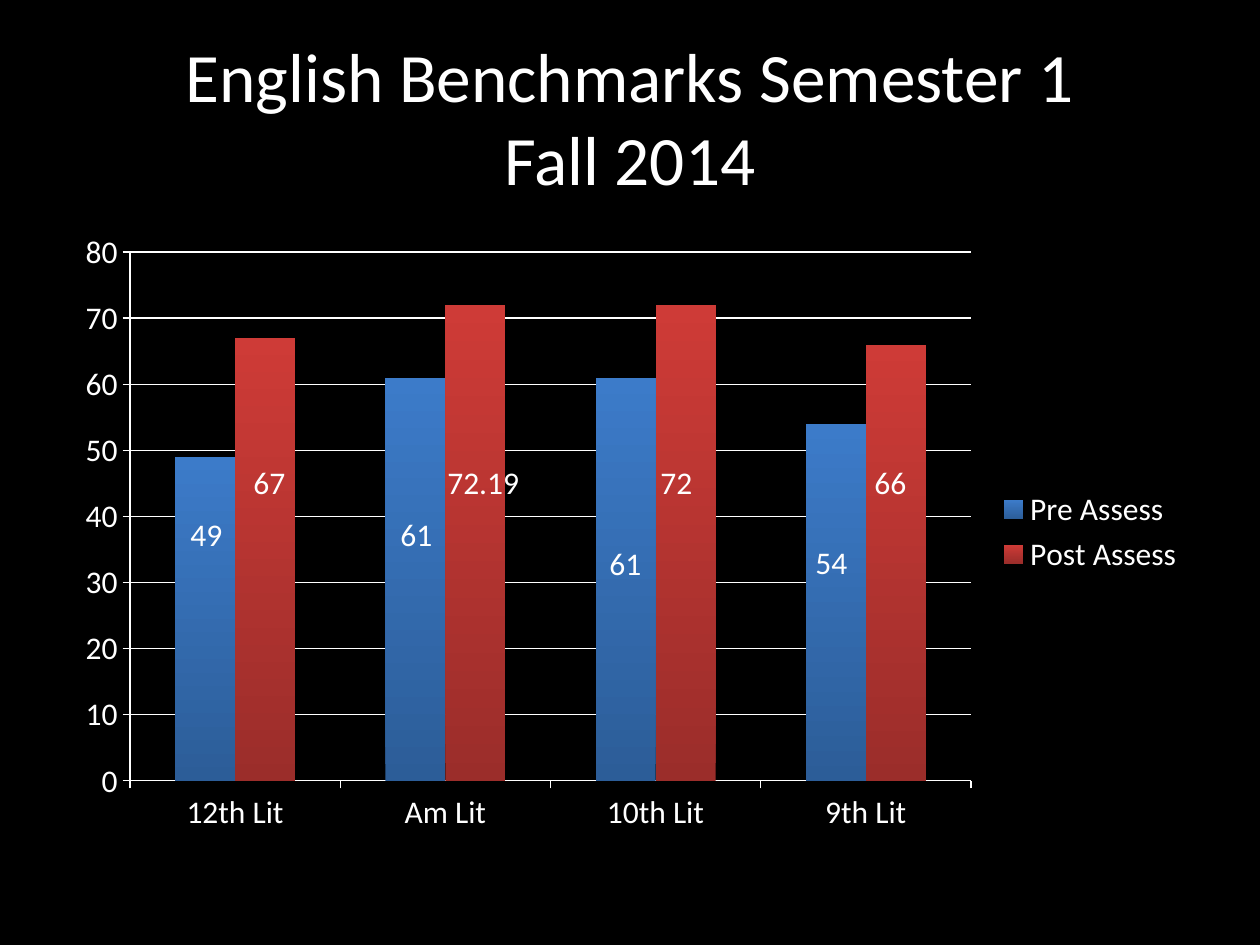
from lxml import etree
from pptx import Presentation
from pptx.chart.data import CategoryChartData
from pptx.dml.color import RGBColor
from pptx.enum.chart import XL_CHART_TYPE, XL_LEGEND_POSITION, XL_TICK_MARK
from pptx.enum.text import MSO_ANCHOR, PP_ALIGN
from pptx.util import Pt

COLUMNS = XL_CHART_TYPE.COLUMN_CLUSTERED
LEGEND_RIGHT = XL_LEGEND_POSITION.RIGHT
TICK_OUTSIDE = XL_TICK_MARK.OUTSIDE
MIDDLE, CENTER, LEFT = MSO_ANCHOR.MIDDLE, PP_ALIGN.CENTER, PP_ALIGN.LEFT

# Content
TITLE = "English Benchmarks Semester 1\vFall 2014"
CATEGORIES = ["12th Lit", "Am Lit", "10th Lit", "9th Lit"]
SERIES = [  # name, values, colour at the foot, colour at the top
    ("Pre Assess", (49, 61, 61, 54), "blue_dark", "blue"),
    ("Post Assess", (67, 72, 72, 66), "red_dark", "red"),
]
VALUE_NOTES = [  # text, left, top, width
    ("67", 241, 457, 102), ("66", 862, 457, 58),
    ("72.19", 435, 457, 98), ("72", 648, 457, 58),
    ("49", 178, 509, 58), ("61", 388, 509, 58),
    ("61", 597, 538, 58), ("54", 803, 537, 58),
]
COLORS = {
    "background": "000000", "text": "FFFFFF",
    "blue_dark": "2C5D98", "blue": "3C7BC9",
    "red_dark": "9B2D2A", "red": "CE3B37",
}
FONT = "Calibri"

# Layout in px
SCALE = 914400 / 126
TITLE_BOX = (63, 38, 1134, 157)
CHART_BOX = (63, 220, 1134, 624)
PLOT_BOX = (130, 252, 841, 529)
NOTE_HEIGHT = 50


def emu(*lengths):
    return [round(length * SCALE) for length in lengths]


def color(name):
    return RGBColor.from_string(COLORS[name])


def style_font(font, size):
    font.name, font.size = FONT, Pt(size)
    font.color.rgb = color("text")


def add_text(slide, text, box, size, align=LEFT, wrap=False):
    frame = slide.shapes.add_textbox(*emu(*box)).text_frame
    frame.word_wrap = wrap
    if wrap:
        frame.vertical_anchor = MIDDLE
    paragraph = frame.paragraphs[0]
    paragraph.text = text
    paragraph.alignment = align
    style_font(paragraph.font, size)


def place_plot(chart):
    """Fix the inner plot area as fractions of the chart frame."""
    plot_area = chart.plots[0]._element.getparent()
    namespace = etree.QName(plot_area).namespace
    for old in plot_area.findall(f"{{{namespace}}}layout"):
        plot_area.remove(old)
    layout = etree.Element(f"{{{namespace}}}layout")
    manual = etree.SubElement(layout, f"{{{namespace}}}manualLayout")
    left, top, width, height = CHART_BOX
    plot_left, plot_top, plot_width, plot_height = PLOT_BOX
    settings = [
        ("layoutTarget", "inner"), ("xMode", "edge"), ("yMode", "edge"),
        ("x", (plot_left - left) / width), ("y", (plot_top - top) / height),
        ("w", plot_width / width), ("h", plot_height / height),
    ]
    for tag, value in settings:
        etree.SubElement(manual, f"{{{namespace}}}{tag}").set("val", str(value))
    plot_area.insert(0, layout)


def add_benchmark_chart(slide):
    data = CategoryChartData()
    data.categories = CATEGORIES
    for name, values, _, _ in SERIES:
        data.add_series(name, values)
    chart = slide.shapes.add_chart(COLUMNS, *emu(*CHART_BOX), data).chart
    style_font(chart.font, 18)
    chart.has_title = False
    chart.has_legend = True
    chart.legend.position = LEGEND_RIGHT
    chart.legend.include_in_layout = False

    # Columns
    plot = chart.plots[0]
    plot.gap_width, plot.overlap = 150, 0
    plot.vary_by_categories = False
    for series, (_, _, foot, top) in zip(plot.series, SERIES):
        fill = series.format.fill
        fill.gradient()
        fill.gradient_angle = 90
        for stop, name in zip(fill.gradient_stops, (foot, top)):
            stop.color.rgb = color(name)

    # Axes
    value_axis = chart.value_axis
    value_axis.minimum_scale, value_axis.maximum_scale = 0, 80
    value_axis.major_unit = 10
    value_axis.has_major_gridlines = True
    for axis in (chart.category_axis, value_axis):
        axis.major_tick_mark = TICK_OUTSIDE
    for part in (chart.category_axis, value_axis, value_axis.major_gridlines):
        part.format.line.color.rgb = color("text")
        part.format.line.width = Pt(0.75)
    place_plot(chart)


def main():
    presentation = Presentation()
    presentation.slide_width, presentation.slide_height = emu(1260, 945)
    slide = presentation.slides.add_slide(presentation.slide_layouts[6])
    slide.background.fill.solid()
    slide.background.fill.fore_color.rgb = color("background")

    add_text(slide, TITLE, TITLE_BOX, 39.6, CENTER, wrap=True)
    add_benchmark_chart(slide)
    for text, left, top, width in VALUE_NOTES:
        add_text(slide, text, (left, top, width, NOTE_HEIGHT), 18)
    presentation.save("out.pptx")


if __name__ == "__main__":
    main()
